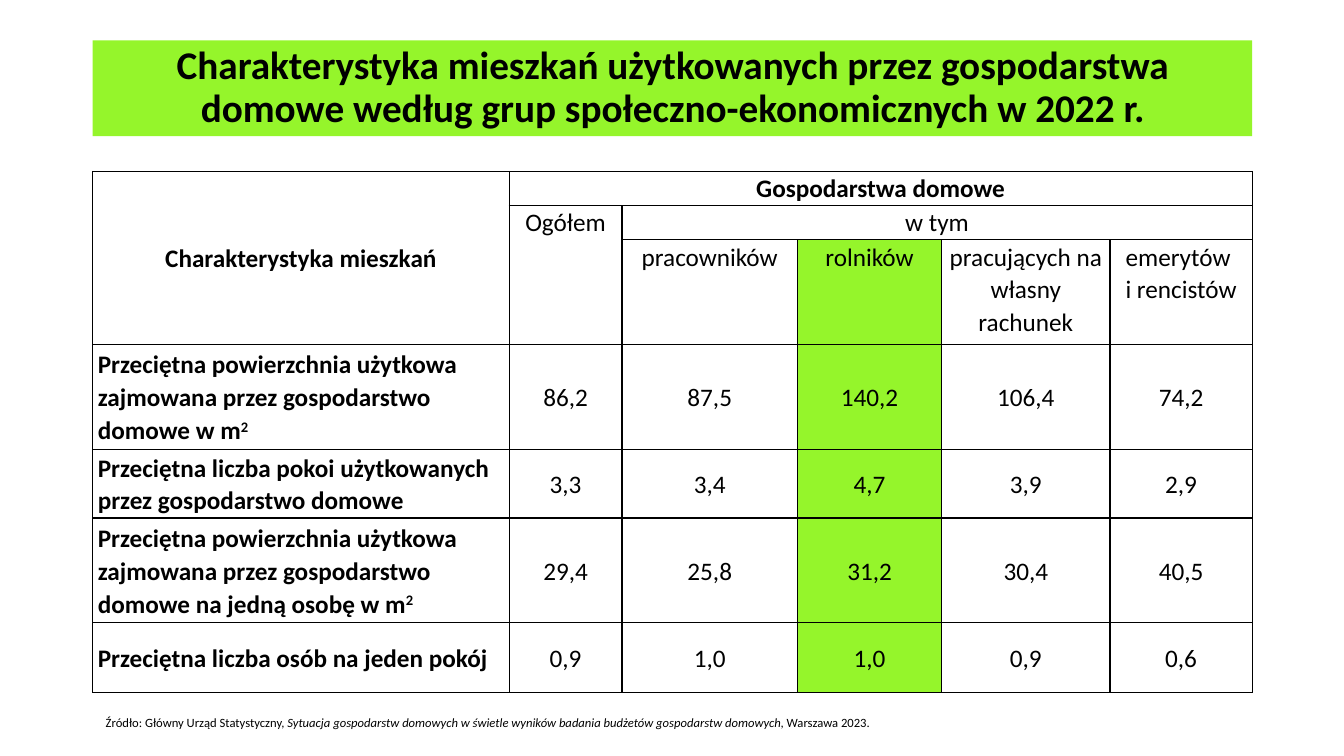
from dataclasses import dataclass

from lxml import etree
from pptx import Presentation
from pptx.dml.color import RGBColor
from pptx.enum.shapes import MSO_SHAPE
from pptx.enum.text import MSO_ANCHOR, PP_ALIGN
from pptx.oxml.ns import qn
from pptx.util import Pt

EMU_PER_PX = 9144
RECTANGLE = MSO_SHAPE.RECTANGLE
TOP, MIDDLE = MSO_ANCHOR.TOP, MSO_ANCHOR.MIDDLE
LEFT, CENTER = PP_ALIGN.LEFT, PP_ALIGN.CENTER
BLANK_LAYOUT = 6
SUPERSCRIPT = "30000"

TITLE = (
    "Charakterystyka mieszkań użytkowanych przez gospodarstwa domowe "
    "według grup społeczno-ekonomicznych w 2022 r."
)
COLUMN_WIDTHS = [413, 112, 174, 143, 167, 141]
ROW_HEIGHTS = [34, 34, 104, 104, 68, 104, 69]
FARMERS_COLUMN = 3
GROUPS_ROW = 2
FIRST_DATA_ROW = 3
MERGES = [((0, 0), (2, 0)), ((0, 1), (0, 5)), ((1, 1), (2, 1)), ((1, 2), (1, 5))]
HEADERS = [
    (0, 0, ["Charakterystyka mieszkań"]),
    (0, 1, ["Gospodarstwa domowe"]),
    (1, 1, ["Ogółem"]),
    (1, 2, ["w tym"]),
    (2, 2, ["pracowników"]),
    (2, 3, ["rolników"]),
    (2, 4, ["pracujących na własny rachunek"]),
    (2, 5, ["emerytów ", "i rencistów"]),
]
DATA = [
    ("Przeciętna powierzchnia użytkowa zajmowana przez gospodarstwo domowe w m", "2",
     ["86,2", "87,5", "140,2", "106,4", "74,2"]),
    ("Przeciętna liczba pokoi użytkowanych przez gospodarstwo domowe", "",
     ["3,3", "3,4", "4,7", "3,9", "2,9"]),
    ("Przeciętna powierzchnia użytkowa zajmowana przez gospodarstwo domowe "
     "na jedną osobę w m", "2",
     ["29,4", "25,8", "31,2", "30,4", "40,5"]),
    ("Przeciętna liczba osób na jeden pokój", "",
     ["0,9", "1,0", "1,0", "0,9", "0,6"]),
]


@dataclass(frozen=True)
class Theme:
    """Colours, font and type sizes of the slide."""
    font: str = "Calibri"
    ink: str = "000000"
    accent: str = "95F52B"
    title_size: int = 28
    table_size: int = 18
    source_size: int = 9
    border_width: int = 1


def px(*lengths):
    """Turn pixel lengths into EMU."""
    return [length * EMU_PER_PX for length in lengths]


class SlideBuilder:
    """Adds styled elements to one slide."""

    def __init__(self, slide, theme):
        """Keep the slide and its style."""
        self.slide = slide
        self.theme = theme

    def run(self, paragraph, text, size, bold=False, italic=False, raised=False):
        """Add one styled run."""
        run = paragraph.add_run()
        run.text = text
        font = run.font
        font.name, font.size = self.theme.font, Pt(size)
        font.bold, font.italic = bold, italic
        font.color.rgb = RGBColor.from_string(self.theme.ink)
        if raised:
            run._r.get_or_add_rPr().set("baseline", SUPERSCRIPT)

    def banner(self, box, text):
        """Add the filled title bar."""
        shape = self.slide.shapes.add_shape(RECTANGLE, *px(*box))
        shape.shadow.inherit = False
        shape.fill.solid()
        shape.fill.fore_color.rgb = RGBColor.from_string(self.theme.accent)
        shape.line.fill.background()
        frame = shape.text_frame
        frame.word_wrap, frame.vertical_anchor = True, MIDDLE
        paragraph = frame.paragraphs[0]
        paragraph.alignment, paragraph.line_spacing = CENTER, 0.9
        self.run(paragraph, text, self.theme.title_size, bold=True)

    def text(self, box, pieces):
        """Add a small text box from text and italic pairs."""
        frame = self.slide.shapes.add_textbox(*px(*box)).text_frame
        frame.word_wrap = True
        for text, italic in pieces:
            self.run(frame.paragraphs[0], text, self.theme.source_size, italic=italic)

    def table(self, left, top, column_widths, row_heights, merges):
        """Add a plain bordered table with merged cells."""
        box = px(left, top, sum(column_widths), sum(row_heights))
        table = self.slide.shapes.add_table(
            len(row_heights), len(column_widths), *box).table
        table.first_row = table.horz_banding = False
        for column, width in zip(table.columns, px(*column_widths)):
            column.width = width
        for row, height in zip(table.rows, px(*row_heights)):
            row.height = height
        for cell in table.iter_cells():
            cell.fill.background()
            self.borders(cell)
        for first, last in merges:
            table.cell(*first).merge(table.cell(*last))
        return table

    def borders(self, cell):
        """Draw all four cell borders."""
        properties = cell._tc.get_or_add_tcPr()
        for index, side in enumerate(("lnL", "lnR", "lnT", "lnB")):
            line = etree.Element(qn(f"a:{side}"), w=str(Pt(self.theme.border_width)))
            fill = etree.SubElement(line, qn("a:solidFill"))
            etree.SubElement(fill, qn("a:srgbClr"), val=self.theme.ink)
            properties.insert(index, line)

    def cell(self, cell, lines, bold=False, alignment=CENTER, anchor=MIDDLE, raised=""):
        """Write lines of text into a cell."""
        cell.margin_left, cell.margin_right = px(5, 5)
        cell.margin_top = cell.margin_bottom = 0
        cell.vertical_anchor = anchor
        frame = cell.text_frame
        for index, line in enumerate(lines):
            paragraph = frame.add_paragraph() if index else frame.paragraphs[0]
            paragraph.alignment, paragraph.line_spacing = alignment, 1.07
            self.run(paragraph, line, self.theme.table_size, bold)
        if raised:
            self.run(paragraph, raised, self.theme.table_size, bold, raised=True)

    def highlight(self, cell):
        """Fill a cell with the accent colour."""
        cell.fill.solid()
        cell.fill.fore_color.rgb = RGBColor.from_string(self.theme.accent)


def main():
    """Build and save the presentation."""
    presentation = Presentation()
    presentation.slide_width, presentation.slide_height = px(1333, 750)
    slide = presentation.slides.add_slide(presentation.slide_layouts[BLANK_LAYOUT])
    builder = SlideBuilder(slide, Theme())
    builder.banner((92, 40, 1150, 95), TITLE)

    table = builder.table(92, 170, COLUMN_WIDTHS, ROW_HEIGHTS, MERGES)
    for row, column, lines in HEADERS:
        anchor = TOP if column else MIDDLE
        builder.cell(table.cell(row, column), lines, bold=row == 0, anchor=anchor)
    for row, (label, raised, values) in enumerate(DATA, FIRST_DATA_ROW):
        builder.cell(table.cell(row, 0), [label], True, LEFT, raised=raised)
        for column, value in enumerate(values, 1):
            builder.cell(table.cell(row, column), [value])
    for row in range(GROUPS_ROW, len(ROW_HEIGHTS)):
        builder.highlight(table.cell(row, FARMERS_COLUMN))

    builder.text((95, 704, 1128, 25), [
        ("Źródło: Główny Urząd Statystyczny, ", False),
        ("Sytuacja gospodarstw domowych w świetle wyników badania "
         "budżetów gospodarstw domowych", True),
        (", Warszawa 2023.", False),
    ])
    presentation.save("out.pptx")


if __name__ == "__main__":
    main()
